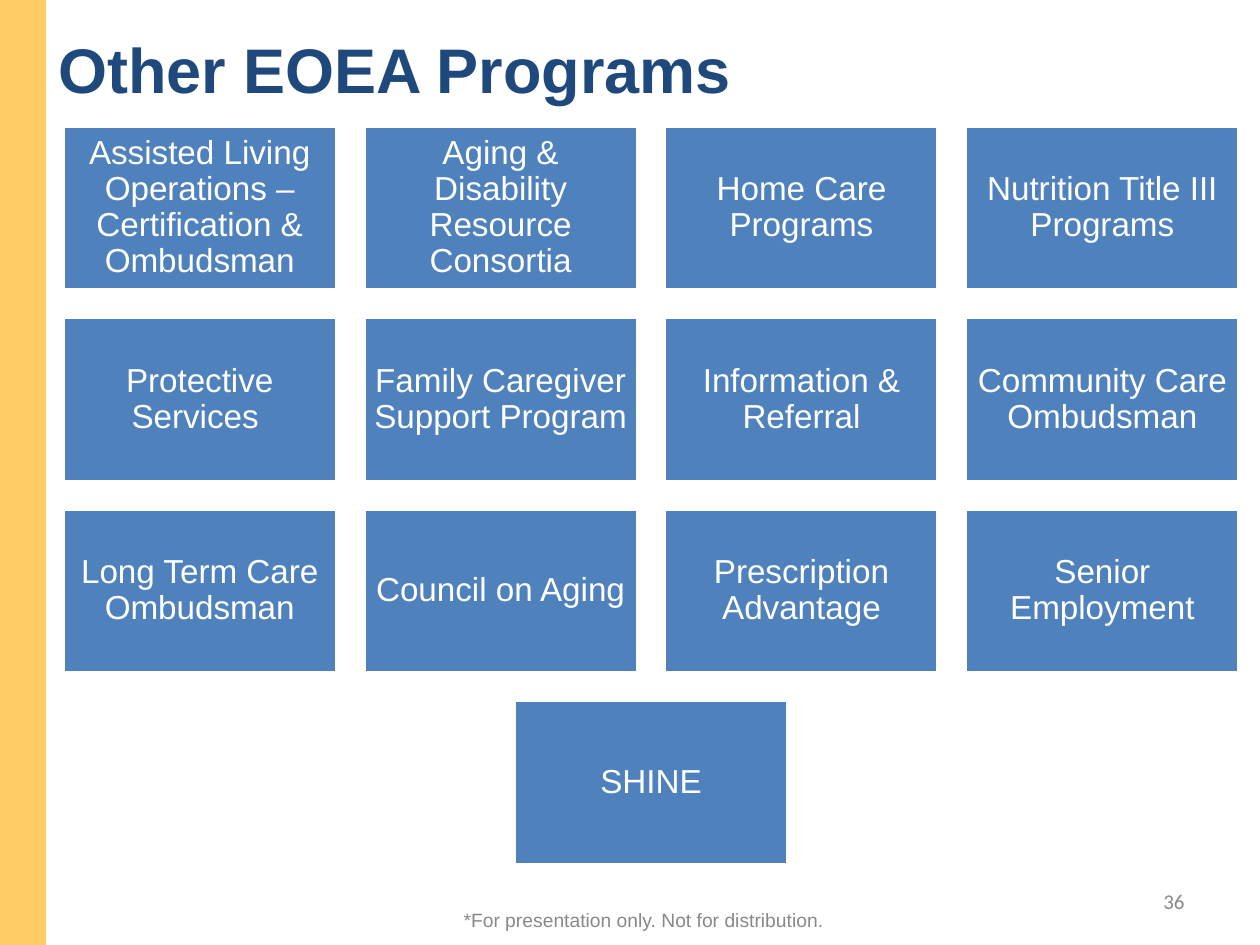
from pptx import Presentation
from pptx.dml.color import RGBColor
from pptx.enum.shapes import MSO_SHAPE as Shape
from pptx.enum.text import MSO_ANCHOR as Anchor, MSO_AUTO_SIZE as AutoSize, PP_ALIGN as Align
from pptx.util import Pt

TITLE = "Other EOEA Programs"
PROGRAM_ROWS = [
    ["Assisted Living Operations – Certification & Ombudsman",
     "Aging & Disability Resource Consortia",
     "Home Care Programs",
     "Nutrition Title III Programs"],
    ["Protective Services ",
     "Family Caregiver Support Program",
     "Information & Referral",
     "Community Care Ombudsman"],
    ["Long Term Care Ombudsman",
     "Council on Aging",
     "Prescription Advantage",
     "Senior Employment"],
    ["SHINE"],
]
FOOTNOTE = "*For presentation only. Not for distribution."
PAGE_NUMBER = "36"

NAVY = RGBColor(0x1F, 0x49, 0x7D)
BLUE = RGBColor(0x4F, 0x81, 0xBD)
YELLOW = RGBColor(0xFF, 0xCC, 0x66)
GREY = RGBColor(0x88, 0x88, 0x88)
WHITE = RGBColor(0xFF, 0xFF, 0xFF)

PAGE_W, PAGE_H = 720, 540
GRID_LEFT, GRID_TOP, COLUMNS = 36, 72, 4
TILE_W = 156.3
TILE_H = 0.6 * TILE_W
GAP = 0.1 * TILE_W


def write(shape, text, size, color, font="Arial", bold=False,
          align=Align.LEFT, anchor=Anchor.MIDDLE):
    frame = shape.text_frame
    frame.text = text
    frame.word_wrap = True
    frame.auto_size = AutoSize.NONE
    frame.vertical_anchor = anchor
    para = frame.paragraphs[0]
    para.alignment = align
    style = para.runs[0].font
    style.name, style.size, style.bold = font, Pt(size), bold
    style.color.rgb = color
    return frame


def add_rectangle(page, left, top, width, height, fill):
    box = page.shapes.add_shape(Shape.RECTANGLE, Pt(left), Pt(top), Pt(width), Pt(height))
    box.shadow.inherit = False
    box.fill.solid()
    box.fill.fore_color.rgb = fill
    box.line.fill.background()
    return box


def add_tile(page, left, top, program):
    tile = add_rectangle(page, left, top, TILE_W, TILE_H, BLUE)
    tile.line.color.rgb = WHITE
    tile.line.width = Pt(2)
    frame = write(tile, program, 19, WHITE, align=Align.CENTER)
    frame.margin_left = frame.margin_right = Pt(5.7)
    frame.margin_top = frame.margin_bottom = Pt(5.7)
    frame.paragraphs[0].line_spacing = 0.9


def add_tiles(page):
    """Lay the programs out in rows, centring a row that is not full."""
    for row, programs in enumerate(PROGRAM_ROWS):
        indent = (COLUMNS - len(programs)) * (TILE_W + GAP) / 2
        for column, program in enumerate(programs):
            add_tile(page,
                     GRID_LEFT + indent + column * (TILE_W + GAP),
                     GRID_TOP + row * (TILE_H + GAP),
                     program)


def main():
    deck = Presentation()
    deck.slide_width, deck.slide_height = Pt(PAGE_W), Pt(PAGE_H)
    page = deck.slides.add_slide(deck.slide_layouts[5])

    title = page.shapes.title
    title.left, title.top, title.width, title.height = Pt(26), Pt(-0.7), Pt(648), Pt(80)
    write(title, TITLE, 36, NAVY, bold=True)

    add_rectangle(page, 0, 0, 26.3, PAGE_H, YELLOW)

    number = page.shapes.add_textbox(Pt(516), Pt(500.4), Pt(168), Pt(28.8))
    write(number, PAGE_NUMBER, 12, GREY, font="Calibri", align=Align.RIGHT)

    add_tiles(page)

    footnote = page.shapes.add_textbox(Pt(257.8), Pt(515.5), Pt(360), Pt(20.6))
    write(footnote, FOOTNOTE, 11, GREY, anchor=Anchor.TOP)

    deck.save("out.pptx")


if __name__ == "__main__":
    main()
